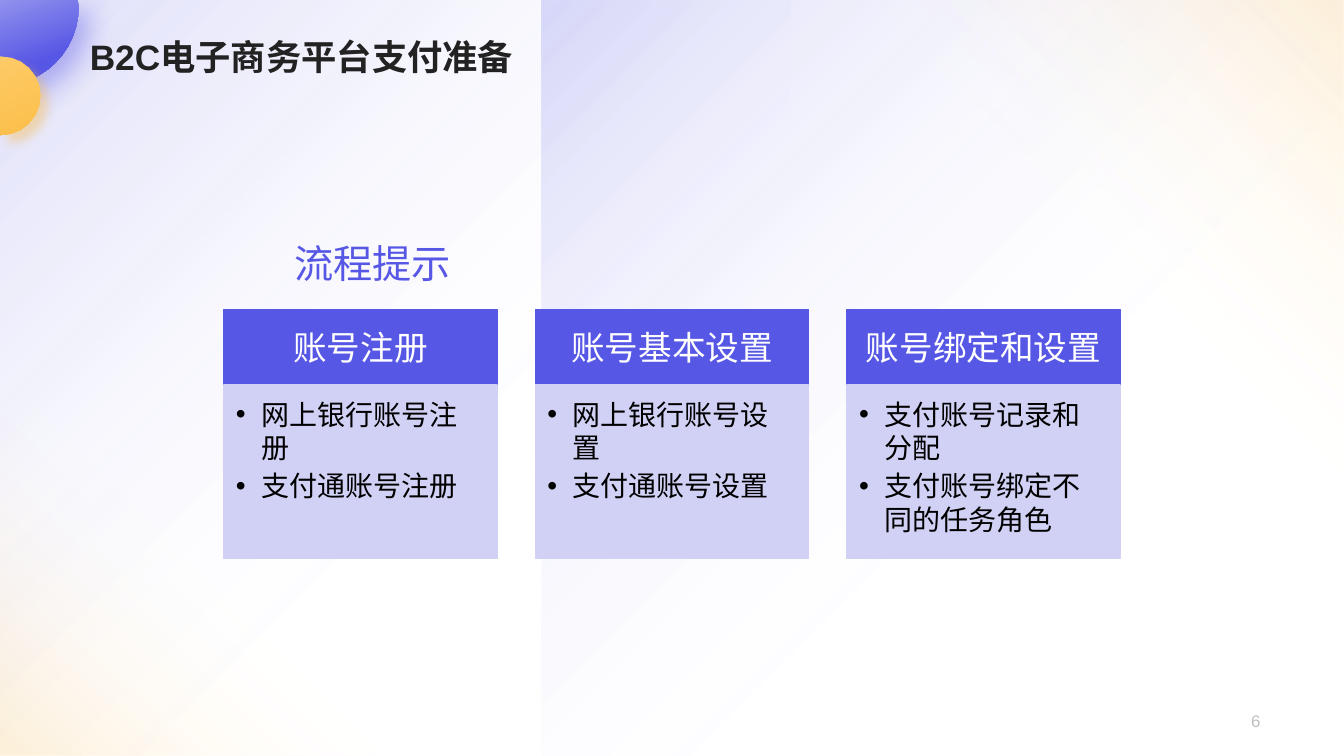
import math
from dataclasses import dataclass

from lxml import etree
from pptx import Presentation, util as u
from pptx.dml.color import RGBColor
from pptx.enum import shapes, text
from pptx.oxml import parse_xml
from pptx.oxml.ns import nsdecls, qn


@dataclass(frozen=True)
class Theme:
    font: str = "Arial"
    violet: str = "5757E5"
    violet_light: str = "9191EE"
    lilac: str = "D1D1F5"
    amber: str = "FCBE49"
    amber_light: str = "FDCB67"
    white: str = "FFFFFF"
    ink: str = "000000"
    title_ink: str = "222222"
    grey: str = "BFBFBF"
    title: float = 25.2
    prompt: float = 28
    head: float = 24
    body: float = 20
    number: float = 12


T = Theme()
WIDTH, HEIGHT = 13.33, 7.5
CARD_LEFT, CARD_TOP, CARD_PITCH = 2.22, 3.07, 3.09
CARD_WIDTH, HEAD_HEIGHT, BODY_HEIGHT = 2.71, 0.75, 1.72
CARDS = [
    ("账号注册", ["网上银行账号注册", "支付通账号注册"]),
    ("账号基本设置", ["网上银行账号设置", "支付通账号设置"]),
    ("账号绑定和设置", ["支付账号记录和分配", "支付账号绑定不同的任务角色"]),
]
GLOW = '<a:path path="circle"><a:fillToRect r="100000" b="100000"/></a:path>'


def linear(angle):
    return f'<a:lin ang="{angle * 60000}" scaled="0"/>'


def set_gradient(sp, stops, direction):
    """Fill with stops of (position %, colour, opacity %) and remove the outline."""
    stop_xml = "".join(
        f'<a:gs pos="{pos * 1000}"><a:srgbClr val="{color}">'
        f'<a:alpha val="{alpha * 1000}"/></a:srgbClr></a:gs>'
        for pos, color, alpha in stops)
    sp._element.spPr.append(parse_xml(
        f'<a:gradFill {nsdecls("a")} rotWithShape="1">'
        f'<a:gsLst>{stop_xml}</a:gsLst>{direction}</a:gradFill>'))
    sp.line.fill.background()
    sp.shadow.inherit = False


def set_shadow(sp, color, blur, distance):
    effects = sp._element.spPr.find(qn("a:effectLst"))
    effects.append(parse_xml(
        f'<a:outerShdw {nsdecls("a")} blurRad="{u.Pt(blur)}" dist="{u.Pt(distance)}" '
        f'dir="2700000" algn="tl" rotWithShape="0"><a:srgbClr val="{color}">'
        f'<a:alpha val="40000"/></a:srgbClr></a:outerShdw>'))


def add_rect(s, x, y, w, h):
    return s.shapes.add_shape(shapes.MSO_SHAPE.RECTANGLE, *map(u.Inches, (x, y, w, h)))


def add_wash(s, box, stops, direction):
    set_gradient(add_rect(s, *box), stops, direction)


def arc(cx, cy, radius, start, end, steps=12):
    angles = (math.radians(start + (end - start) * i / steps) for i in range(steps + 1))
    return [(cx + radius * math.cos(a), cy + radius * math.sin(a)) for a in angles]


def add_disc(s, points, stops, shadow):
    corners = [(u.Inches(x), u.Inches(y)) for x, y in points]
    builder = s.shapes.build_freeform(*corners[0])
    builder.add_line_segments(corners[1:], close=True)
    sp = builder.convert_to_shape()
    set_gradient(sp, stops, linear(70))
    set_shadow(sp, *shadow)


def write(sp, lines, size, color, insets=(0.1, 0.05, 0.1, 0.05), bold=False,
          align=text.PP_ALIGN.LEFT, anchor=text.MSO_ANCHOR.TOP):
    tf = sp.text_frame
    tf.word_wrap = True
    tf.vertical_anchor = anchor
    tf.margin_left, tf.margin_top, tf.margin_right, tf.margin_bottom = map(u.Inches, insets)
    tf.text = "\n".join(lines)
    for p in tf.paragraphs:
        p.alignment = align
        for r in p.runs:
            r.font.name, r.font.size, r.font.bold = T.font, u.Pt(size), bold
            r.font.color.rgb = RGBColor.from_string(color)
    return tf


def add_label(s, box, line, size, color, **options):
    sp = s.shapes.add_textbox(*map(u.Inches, box))
    return write(sp, [line], size, color, **options)


def add_panel(s, box, color):
    sp = add_rect(s, *box)
    sp.shadow.inherit = False
    sp.line.width = u.Pt(1)
    for fill in (sp.fill, sp.line.fill):
        fill.solid()
        fill.fore_color.rgb = RGBColor.from_string(color)
    return sp


def add_bullets(tf):
    for p in tf.paragraphs:
        p.space_after = u.Pt(3)
        pPr = p._p.get_or_add_pPr()
        pPr.set("marL", str(u.Inches(0.25)))
        pPr.set("indent", str(u.Inches(-0.25)))
        etree.SubElement(pPr, qn("a:buFont")).set("typeface", T.font)
        etree.SubElement(pPr, qn("a:buChar")).set("char", "•")


def add_card(s, column, heading, items):
    x = CARD_LEFT + column * CARD_PITCH
    head = add_panel(s, (x, CARD_TOP, CARD_WIDTH, HEAD_HEIGHT), T.violet)
    write(head, [heading], T.head, T.white, insets=(0.11, 0.11, 0.11, 0.11),
          align=text.PP_ALIGN.CENTER, anchor=text.MSO_ANCHOR.MIDDLE)
    body = add_panel(s, (x, CARD_TOP + HEAD_HEIGHT, CARD_WIDTH, BODY_HEIGHT), T.lilac)
    add_bullets(write(body, items, T.body, T.ink, insets=(0.12, 0.12, 0.16, 0.17)))


def add_background(s):
    violet_wash = [(0, T.violet, 20), (65, T.white, 0)]
    amber_wash = [(45, T.white, 0), (98, T.amber, 20)]
    add_wash(s, (0, 0, 7.84, HEIGHT), violet_wash, GLOW)
    add_wash(s, (8.7, 0, WIDTH - 8.7, 4.84), amber_wash, linear(315))
    add_wash(s, (0, 3.9, 3.99, HEIGHT - 3.9), amber_wash, linear(135))
    add_wash(s, (5.37, 0, WIDTH - 5.37, HEIGHT), violet_wash, GLOW)
    add_disc(s, [(0, 0), (0.77, 0)] + arc(0, 0.07, 0.78, 0, 90),
             [(0, T.violet_light, 100), (67, T.violet, 100)], (T.violet, 19, 11))
    add_disc(s, [(0, 0.56)] + arc(0.01, 0.95, 0.39, -90, 90) + [(0, 1.34)],
             [(0, T.amber_light, 100), (100, T.amber, 100)], (T.amber, 7, 8))


def main():
    prs = Presentation()
    prs.slide_width, prs.slide_height = u.Inches(WIDTH), u.Inches(HEIGHT)
    s = prs.slides.add_slide(prs.slide_layouts[6])
    add_background(s)
    title = add_label(s, (0.85, 0.35, 6.48, 0.55), "B2C电子商务平台支付准备", T.title,
                      T.title_ink, insets=(0.04, 0.05, 0.1, 0.05), bold=True)
    title.paragraphs[0].line_spacing = 0.9
    add_label(s, (9.6, 6.95, 3, 0.4), "6", T.number, T.grey,
              align=text.PP_ALIGN.RIGHT, anchor=text.MSO_ANCHOR.MIDDLE)
    add_label(s, (2.82, 2.33, 6.47, 0.6), "流程提示", T.prompt, T.violet)
    for column, (heading, items) in enumerate(CARDS):
        add_card(s, column, heading, items)
    prs.save("out.pptx")


if __name__ == "__main__":
    main()
